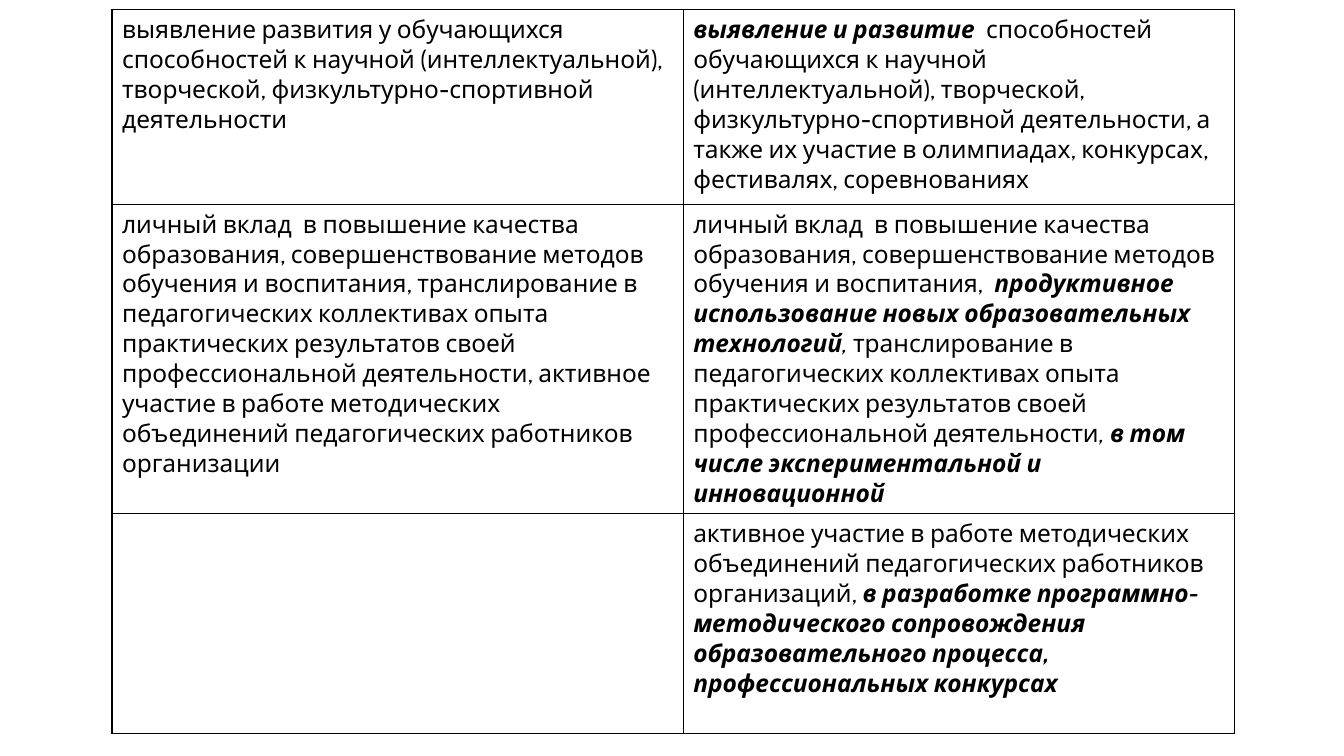
"""Build a slide with a two-column comparison table of teacher assessment criteria."""
from dataclasses import dataclass

from lxml import etree
from pptx import Presentation
from pptx import util as u
from pptx.dml.color import RGBColor
from pptx.enum import text
from pptx.oxml import ns

BLACK = RGBColor(0x00, 0x00, 0x00)
FONT = "Cabin"
COLUMN_WIDTHS = (408, 394)
ROW_HEIGHTS = (139, 221, 157)
LEFT, TOP = 80, 7


@dataclass(frozen=True)
class Phrase:
    wording: str
    bold: bool = False
    italic: bool = False


def strong(wording: str) -> Phrase:
    return Phrase(wording, bold=True, italic=True)


CRITERIA: list[tuple[list[Phrase], list[Phrase]]] = [
    (
        [Phrase("выявление развития у обучающихся способностей к научной (интеллектуальной), "
                "творческой, физкультурно-спортивной деятельности")],
        [strong("выявление и развитие  "),
         Phrase("способностей обучающихся к научной (интеллектуальной), творческой, "
                "физкультурно-спортивной деятельности, а также их участие в олимпиадах, "
                "конкурсах, фестивалях, соревнованиях")],
    ),
    (
        [Phrase("личный вклад  в повышение качества образования, совершенствование методов "
                "обучения и воспитания, транслирование в педагогических коллективах опыта "
                "практических результатов своей профессиональной деятельности, активное участие "
                "в работе методических объединений педагогических работников организации")],
        [Phrase("личный вклад  в повышение качества образования, совершенствование методов "
                "обучения и воспитания,  "),
         strong("продуктивное использование новых образовательных технологий"),
         Phrase(", ", italic=True),
         Phrase("транслирование в педагогических коллективах опыта практических результатов "
                "своей профессиональной деятельности"),
         Phrase(", ", italic=True),
         strong("в том числе экспериментальной и инновационной")],
    ),
    (
        [],
        [Phrase("активное участие в работе методических объединений педагогических работников "
                "организаций, "),
         strong("в разработке программно-методического сопровождения образовательного процесса, "
                "профессиональных конкурсах")],
    ),
]


def add_run(paragraph, wording: str, *, bold: bool = False, italic: bool = False,
            size: float = 17.5, color: RGBColor = BLACK) -> None:
    run = paragraph.add_run()
    run.text = wording
    font = run.font
    font.name, font.size = FONT, u.Pt(size)
    font.bold, font.italic = bold, italic
    font.color.rgb = color


def add_borders(cell, color: RGBColor = BLACK, width: float = 1) -> None:
    properties = cell._tc.get_or_add_tcPr()
    for side in ("lnL", "lnR", "lnT", "lnB"):
        line = etree.SubElement(properties, ns.qn(f"a:{side}"), w=str(u.Pt(width)))
        fill = etree.SubElement(line, ns.qn("a:solidFill"))
        etree.SubElement(fill, ns.qn("a:srgbClr"), val=str(color))


def fill_cell(cell, phrases: list[Phrase]) -> None:
    add_borders(cell)
    cell.fill.background()
    cell.vertical_anchor = text.MSO_ANCHOR.TOP
    paragraph = cell.text_frame.paragraphs[0]
    paragraph.alignment = text.PP_ALIGN.LEFT
    for phrase in phrases:
        add_run(paragraph, phrase.wording, bold=phrase.bold, italic=phrase.italic)


def add_criteria_table(slide) -> None:
    table = slide.shapes.add_table(
        len(ROW_HEIGHTS), len(COLUMN_WIDTHS), u.Pt(LEFT), u.Pt(TOP),
        u.Pt(sum(COLUMN_WIDTHS)), u.Pt(sum(ROW_HEIGHTS))).table
    table.first_row = table.horz_banding = False
    for column, width in zip(table.columns, COLUMN_WIDTHS):
        column.width = u.Pt(width)
    for row, height, criteria in zip(table.rows, ROW_HEIGHTS, CRITERIA):
        row.height = u.Pt(height)
        for cell, phrases in zip(row.cells, criteria):
            fill_cell(cell, phrases)


def main() -> None:
    presentation = Presentation()
    presentation.slide_width, presentation.slide_height = u.Pt(960), u.Pt(540)
    slide = presentation.slides.add_slide(presentation.slide_layouts.get_by_name("Blank"))
    add_criteria_table(slide)
    presentation.save("out.pptx")


if __name__ == "__main__":
    main()
